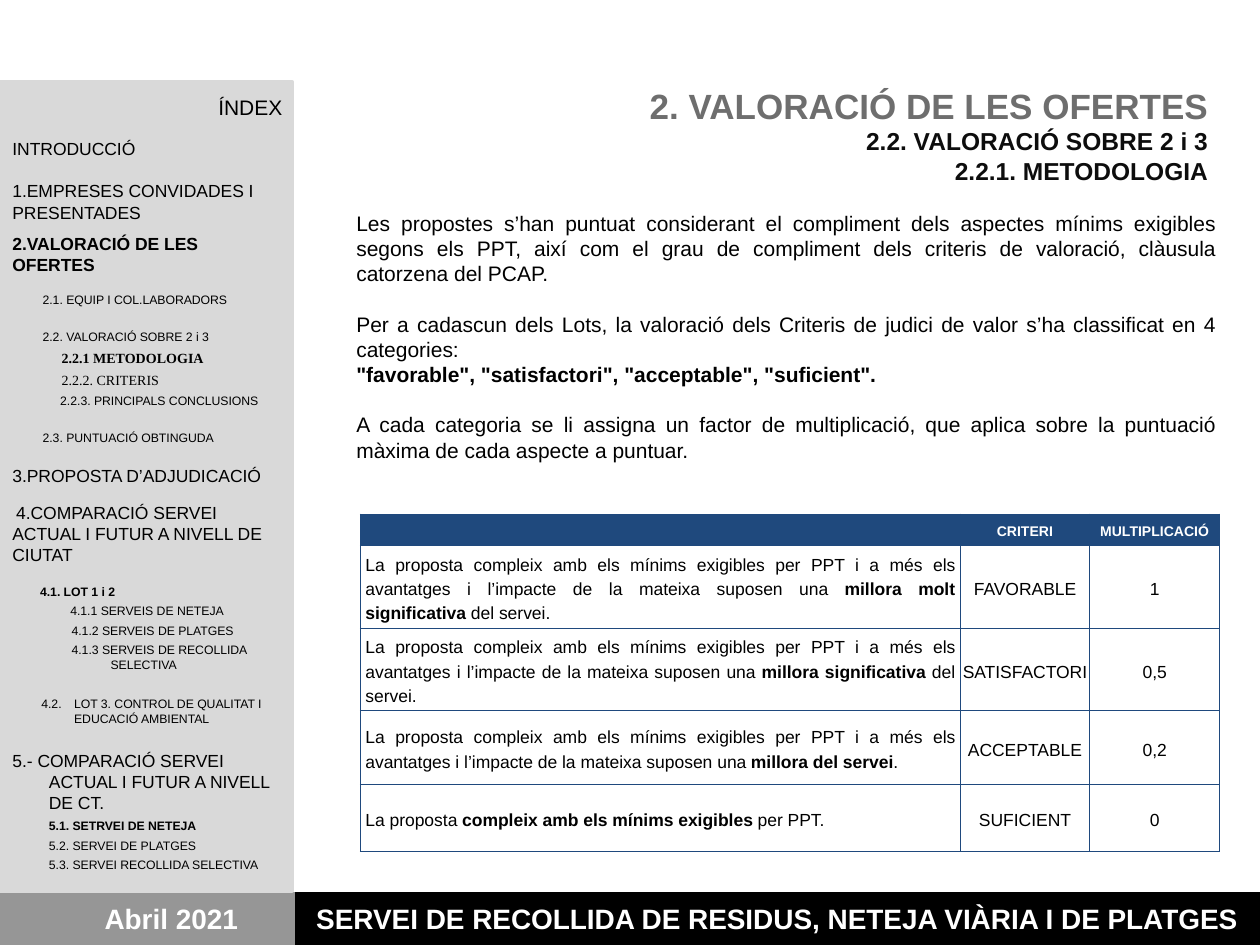
from lxml.etree import SubElement
from pptx import Presentation
from pptx.dml.color import RGBColor
from pptx.enum.shapes import MSO_SHAPE
from pptx.enum.text import MSO_ANCHOR, MSO_AUTO_SIZE, PP_ALIGN
from pptx.oxml.ns import qn
from pptx.util import Inches, Pt

COLOURS = {
    "black": "000000", "white": "FFFFFF", "ink": "0D0D0D", "title": "6E6E6E",
    "date": "969696", "sidebar": "D9D9D9", "navy": "1F497D",
}
SIDEBAR_WIDTH = 2.34
FOOTER_TOP, FOOTER_HEIGHT = 7.08, 0.42
SERIF = "Times New Roman"

# Index entries: text, size, left indent, first-line indent, space before, font
INDEX = [
    ("INTRODUCCIÓ", 10, 0, 0, 10.8, "Arial"),
    ("1.EMPRESES CONVIDADES I PRESENTADES", 10, 0, 0, 12, "Arial"),
    ("**2.VALORACIÓ DE LES OFERTES**", 10, 0, 0, 6, "Arial"),
    ("2.1. EQUIP I COL.LABORADORS", 7, 0.24, 0, 9.9, "Arial"),
    ("2.2. VALORACIÓ SOBRE 2 i 3", 7, 0.24, 0, 12.8, "Arial"),
    ("**2.2.1 METODOLOGIA**", 8, 0.39, 0, 2.9, SERIF),
    ("2.2.2. CRITERIS", 8, 0.39, 0, 3, SERIF),
    ("2.2.3. PRINCIPALS CONCLUSIONS", 7, 0.38, 0, 2.9, "Arial"),
    ("2.3. PUNTUACIÓ OBTINGUDA", 7, 0.24, 0, 12.8, "Arial"),
    ("3.PROPOSTA D’ADJUDICACIÓ", 10, 0, 0, 11.2, "Arial"),
    ("4.COMPARACIÓ SERVEI ACTUAL I FUTUR A NIVELL DE CIUTAT", 10, 0, 0.03, 9.6, "Arial"),
    ("**4.1. LOT 1 i 2**", 7, 0.22, 0, 10.5, "Arial"),
    ("4.1.1 SERVEIS DE NETEJA", 7, 0.46, 0, 2.8, "Arial"),
    ("4.1.2 SERVEIS DE PLATGES", 7, 0.47, 0, 2.8, "Arial"),
    ("4.1.3 SERVEIS DE RECOLLIDA SELECTIVA", 7, 0.78, -0.31, 2.8, "Arial"),
    ("4.2.\tLOT 3. CONTROL DE QUALITAT I EDUCACIÓ AMBIENTAL", 7, 0.49, -0.26, 14, "Arial"),
    ("5.- COMPARACIÓ SERVEI ACTUAL I FUTUR A NIVELL DE CT.", 10, 0.29, -0.29, 14, "Arial"),
    ("**5.1. SETRVEI DE NETEJA**", 7, 0.29, 0, 2.8, "Arial"),
    ("5.2. SERVEI DE PLATGES", 7, 0.29, 0, 2.8, "Arial"),
    ("5.3. SERVEI RECOLLIDA SELECTIVA", 7, 0.29, 0, 2.8, "Arial"),
]

# Body paragraphs: text, space before
BODY = [
    ("Les propostes s’han puntuat considerant el compliment dels aspectes mínims "
     "exigibles segons els PPT, així com el grau de compliment dels criteris de "
     "valoració, clàusula catorzena del PCAP.", 0),
    ("Per a cadascun dels Lots, la valoració dels Criteris de judici de valor "
     "s’ha classificat en 4 categories:", 14.4),
    ('**"favorable", "satisfactori", "acceptable", "suficient".**', 0),
    ("A cada categoria se li assigna un factor de multiplicació, que aplica sobre "
     "la puntuació màxima de cada aspecte a puntuar.", 14.4),
]

LEAD = ("La proposta compleix amb els mínims exigibles per PPT i a més els "
        "avantatges i l’impacte de la mateixa suposen una ")
CRITERIA = [
    ("", "**CRITERI**", "**MULTIPLICACIÓ**"),
    (LEAD + "**millora molt significativa** del servei.", "FAVORABLE", "1"),
    (LEAD + "**millora significativa** del servei.", "SATISFACTORI", "0,5"),
    (LEAD + "**millora del servei**.", "ACCEPTABLE", "0,2"),
    ("La proposta **compleix amb els mínims exigibles ** per PPT.".replace(" ** ", "** "),
     "SUFICIENT", "0"),
]
COLUMN_WIDTHS = [4.76, 1.03, 1.03]
ROW_HEIGHTS = [0.25, 0.66, 0.65, 0.59, 0.53]


def colour(name):
    return RGBColor.from_string(COLOURS[name])


def write(frame, text, *, size, tint="black", font="Arial", align=PP_ALIGN.LEFT,
          before=0, left=0, first=0, spacing=None):
    """Add one paragraph; text between double asterisks is bold."""
    para = frame.paragraphs[0]
    if para.runs:
        para = frame.add_paragraph()
    para.alignment = align
    para.space_before, para.space_after = Pt(before), Pt(0)
    if spacing:
        para.line_spacing = spacing
    if left or first:
        properties = para._p.get_or_add_pPr()
        properties.set("marL", str(Inches(left)))
        properties.set("indent", str(Inches(first)))
    for number, part in enumerate(text.split("**")):
        if part:
            span = para.add_run()
            span.text = part
            span.font.size, span.font.name = Pt(size), font
            span.font.bold = number % 2 == 1
            span.font.color.rgb = colour(tint)
    if not text:
        para._p.get_or_add_endParaRPr().set("sz", str(size * 100))


def add_text_box(page, left, top, width, height):
    frame = page.shapes.add_textbox(*map(Inches, (left, top, width, height))).text_frame
    frame.word_wrap = True
    return frame


def add_panel(page, left, top, width, height, fill, line=None):
    panel = page.shapes.add_shape(
        MSO_SHAPE.RECTANGLE, *map(Inches, (left, top, width, height)))
    panel.shadow.inherit = False
    panel.fill.solid()
    panel.fill.fore_color.rgb = colour(fill)
    if line:
        panel.line.color.rgb = colour(fill)
        panel.line.width = Pt(line)
    else:
        panel.line.fill.background()
    panel.text_frame.vertical_anchor = MSO_ANCHOR.MIDDLE
    return panel.text_frame


def add_borders(cell):
    properties = cell._tc.get_or_add_tcPr()
    for position, side in enumerate(("lnL", "lnR", "lnT", "lnB")):
        line = SubElement(properties, qn(f"a:{side}"), w=str(Pt(0.75)))
        fill = SubElement(line, qn("a:solidFill"))
        SubElement(fill, qn("a:srgbClr"), val=COLOURS["navy"])
        properties.insert(position, line)


def add_criteria_table(page):
    table = page.shapes.add_table(
        len(ROW_HEIGHTS), len(COLUMN_WIDTHS), Inches(2.86), Inches(4.08),
        Inches(sum(COLUMN_WIDTHS)), Inches(sum(ROW_HEIGHTS))).table
    table.first_row = table.horz_banding = False
    for column, width in zip(table.columns, COLUMN_WIDTHS):
        column.width = Inches(width)
    for row, height, texts in zip(table.rows, ROW_HEIGHTS, CRITERIA):
        row.height = Inches(height)
        header = texts is CRITERIA[0]
        for number, (cell, text) in enumerate(zip(row.cells, texts)):
            cell.margin_top = cell.margin_bottom = 0
            cell.margin_left = cell.margin_right = Inches(0 if number else 0.04)
            cell.vertical_anchor = MSO_ANCHOR.MIDDLE
            if header:
                cell.fill.solid()
                cell.fill.fore_color.rgb = colour("navy")
            else:
                cell.fill.background()
            add_borders(cell)
            write(cell.text_frame, text, size=8 if header else 10,
                  tint="white" if header else "black", spacing=1.25,
                  align=PP_ALIGN.CENTER if number else PP_ALIGN.JUSTIFY)


def format_title(page):
    title = page.shapes.title
    title.left, title.top, title.width, title.height = map(Inches, (3.03, 0.62, 6.66, 0.9))
    frame = title.text_frame
    frame.auto_size = MSO_AUTO_SIZE.NONE
    frame.vertical_anchor = MSO_ANCHOR.TOP
    for text, size, tint in (("**2. VALORACIÓ DE LES OFERTES**", 20, "title"),
                             ("**2.2. VALORACIÓ SOBRE 2 i 3**", 14, "ink"),
                             ("**2.2.1. METODOLOGIA**", 14, "ink")):
        write(frame, text, size=size, tint=tint, align=PP_ALIGN.RIGHT)


def add_footer(page):
    for text, left, width, fill, indent in (
            ("**SERVEI DE RECOLLIDA DE RESIDUS, NETEJA VIÀRIA I DE PLATGES**",
             SIDEBAR_WIDTH, 10 - SIDEBAR_WIDTH, "black", 0),
            ("**Abril 2021**", 0, SIDEBAR_WIDTH, "date", 0.38)):
        frame = add_panel(page, left, FOOTER_TOP, width, FOOTER_HEIGHT, fill)
        write(frame, text, size=16, tint="white", align=PP_ALIGN.CENTER, left=indent)


def add_index(page):
    add_panel(page, -0.02, 0.65, SIDEBAR_WIDTH, 6.42, "sidebar", line=2)
    frame = add_text_box(page, 0, 0.7, SIDEBAR_WIDTH, 6.37)
    write(frame, "ÍNDEX", size=12, align=PP_ALIGN.RIGHT)
    for text, size, left, first, before, font in INDEX:
        write(frame, text, size=size, left=left, first=first, before=before, font=font)


def main():
    deck = Presentation()
    deck.slide_width, deck.slide_height = Inches(10), Inches(7.5)
    page = deck.slides.add_slide(deck.slide_layouts[5])

    # Footer, heading and body
    add_footer(page)
    format_title(page)
    body = add_text_box(page, 2.73, 1.62, 7.03, 2.12)
    for text, before in BODY:
        write(body, text, size=12, align=PP_ALIGN.JUSTIFY, before=before)

    # Criteria table and index sidebar
    add_criteria_table(page)
    add_index(page)
    deck.save("out.pptx")


if __name__ == "__main__":
    main()
